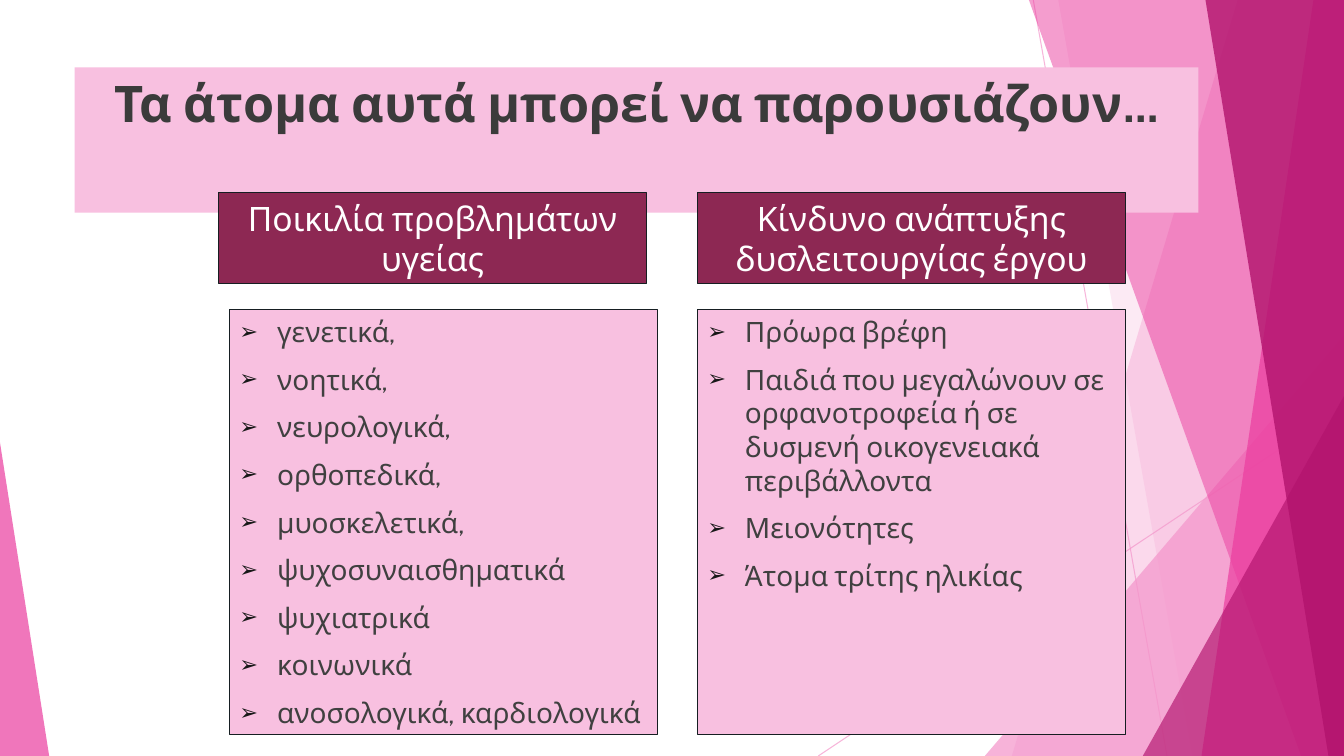
import pptx
import pptx.util
import pptx.dml.color
import pptx.enum.shapes
import pptx.enum.text
import pptx.oxml.ns
from lxml import etree

Cm, Pt = pptx.util.Cm, pptx.util.Pt
RGBColor = pptx.dml.color.RGBColor
ALIGN = pptx.enum.text.PP_ALIGN
ANCHOR = pptx.enum.text.MSO_ANCHOR
qn = pptx.oxml.ns.qn

# Content
TITLE = "Τα άτομα αυτά μπορεί να παρουσιάζουν…"
COLUMNS = [
    ("Ποικιλία προβλημάτων υγείας", [
        "γενετικά,", "νοητικά,", "νευρολογικά,", "ορθοπεδικά,", "μυοσκελετικά,",
        "ψυχοσυναισθηματικά", "ψυχιατρικά", "κοινωνικά", "ανοσολογικά, καρδιολογικά",
    ]),
    ("Κίνδυνο ανάπτυξης δυσλειτουργίας έργου", [
        "Πρόωρα βρέφη",
        "Παιδιά που μεγαλώνουν σε ορφανοτροφεία ή σε δυσμενή οικογενειακά περιβάλλοντα",
        "Μειονότητες", "Άτομα τρίτης ηλικίας",
    ]),
]

# Colours and font
FONT = "Cabin"
LIGHT_PINK = RGBColor(0xF4, 0x96, 0xCB)
PINK = RGBColor(0xEB, 0x3D, 0x9F)
MAGENTA = RGBColor(0xB2, 0x13, 0x6D)
PANEL = RGBColor(0xF8, 0xC0, 0xE0)
PLUM = RGBColor(0x8D, 0x28, 0x53)
OUTLINE = RGBColor(0x16, 0x1E, 0x22)
TITLE_GREY = RGBColor(0x3B, 0x3B, 0x3B)
BODY_GREY = RGBColor(0x40, 0x40, 0x40)
WHITE = RGBColor(0xFF, 0xFF, 0xFF)

# Layout in centimetres
WIDTH, HEIGHT = 33.87, 19.05
TITLE_BOX = (1.88, 1.7, 28.32, 3.66)
COLUMN_WIDTH = 10.8
HEADER_LEFTS, HEADER_TOP, HEADER_HEIGHT = (5.5, 17.57), 4.86, 2.28
LIST_LEFTS, LIST_TOP, LIST_HEIGHT = (5.78, 17.57), 7.8, 10.7

# Backdrop: line ends; bands as (top left x, bottom left x); triangles as (box, apex)
LINES = [(26.04, 0, 29.41, HEIGHT), (WIDTH, 10.24, 20.62, HEIGHT)]
BACKDROP = [
    ("band", (31.19, 25.5), LIGHT_PINK, 36),
    ("band", (26.67, 30.05), LIGHT_PINK, 20),
    ("triangle", (24.82, 8.46, WIDTH, 1), LIGHT_PINK, 72),
    ("band", (25.93, 32.79), PINK, 50),
    ("band", (33.1, 30.28), PINK, 70),
    ("band", (30.38, 33.48), MAGENTA, 80),
    ("triangle", (28.8, 9.98, WIDTH, 1), MAGENTA, 66),
    ("triangle", (0, 11.15, 1.24, 0), PINK, 70),
]


def set_opacity(shape, percent):
    for color in shape._element.spPr.iter(qn("a:srgbClr")):
        etree.SubElement(color, qn("a:alpha"), val=str(percent * 1000))


def add_backdrop(slide):
    group = slide.shapes.add_group_shape()
    for ends in LINES:
        line = group.shapes.add_connector(
            pptx.enum.shapes.MSO_CONNECTOR.STRAIGHT, *map(Cm, ends))
        line.line.color.rgb = LIGHT_PINK
        line.line.width = Pt(0.75)
        set_opacity(line, 70)
        etree.SubElement(line._element.spPr, qn("a:effectLst"))
    for kind, geometry, color, opacity in BACKDROP:
        if kind == "band":
            top_x, bottom_x = geometry
            builder = group.shapes.build_freeform(Cm(top_x), 0)
            corners = [(WIDTH, 0), (WIDTH, HEIGHT), (bottom_x, HEIGHT)]
            builder.add_line_segments([(Cm(x), Cm(y)) for x, y in corners])
            shape = builder.convert_to_shape()
        else:
            left, top, right, apex = geometry
            shape = group.shapes.add_shape(
                pptx.enum.shapes.MSO_SHAPE.ISOSCELES_TRIANGLE,
                Cm(left), Cm(top), Cm(right - left), Cm(HEIGHT - top))
            shape.adjustments[0] = apex
        shape.shadow.inherit = False
        shape.fill.solid()
        shape.fill.fore_color.rgb = color
        shape.line.fill.background()
        set_opacity(shape, opacity)
    # Send the group behind the placeholders
    group._element.getparent().insert(2, group._element)


def place(shape, box, fill, outlined=True):
    shape.left, shape.top, shape.width, shape.height = map(Cm, box)
    shape.fill.solid()
    shape.fill.fore_color.rgb = fill
    if outlined:
        shape.line.color.rgb = OUTLINE
        shape.line.width = Pt(0.75)


def add_bullet(paragraph):
    properties = paragraph._p.get_or_add_pPr()
    properties.set("marL", str(Cm(0.95)))
    properties.set("indent", str(-Cm(0.95)))
    color = etree.SubElement(properties, qn("a:buClr"))
    etree.SubElement(color, qn("a:srgbClr"), val="181818")
    etree.SubElement(properties, qn("a:buSzPct"), val="80000")
    etree.SubElement(properties, qn("a:buChar"), char="➢")


def write(shape, lines, *, size, color, bold=False, align=ALIGN.LEFT,
          anchor=ANCHOR.TOP, before=0, bullet=False):
    frame = shape.text_frame
    frame.text = "\n".join(lines)
    frame.word_wrap = True
    frame.auto_size = pptx.enum.text.MSO_AUTO_SIZE.NONE
    frame.vertical_anchor = anchor
    for paragraph in frame.paragraphs:
        paragraph.alignment = align
        paragraph.space_before = Pt(before)
        if bullet:
            add_bullet(paragraph)
        font = paragraph.runs[0].font
        font.name, font.size, font.bold = FONT, Pt(size), bold
        font.color.rgb = color


def main():
    presentation = pptx.Presentation()
    presentation.slide_width, presentation.slide_height = Cm(WIDTH), Cm(HEIGHT)
    slide = presentation.slides.add_slide(
        presentation.slide_layouts.get_by_name("Comparison"))
    add_backdrop(slide)

    # Title
    title, *bodies = slide.placeholders
    place(title, TITLE_BOX, PANEL, outlined=False)
    write(title, [TITLE], size=36, color=TITLE_GREY, bold=True, align=ALIGN.CENTER)

    # Two columns, each a header over a list
    for index, (heading, items) in enumerate(COLUMNS):
        header, listing = bodies[2 * index:2 * index + 2]
        place(header, (HEADER_LEFTS[index], HEADER_TOP, COLUMN_WIDTH, HEADER_HEIGHT), PLUM)
        write(header, [heading], size=24, color=WHITE, align=ALIGN.CENTER,
              anchor=ANCHOR.BOTTOM, before=10)
        place(listing, (LIST_LEFTS[index], LIST_TOP, COLUMN_WIDTH, LIST_HEIGHT), PANEL)
        write(listing, items, size=20, color=BODY_GREY, before=10, bullet=True)

    presentation.save("out.pptx")


if __name__ == "__main__":
    main()
